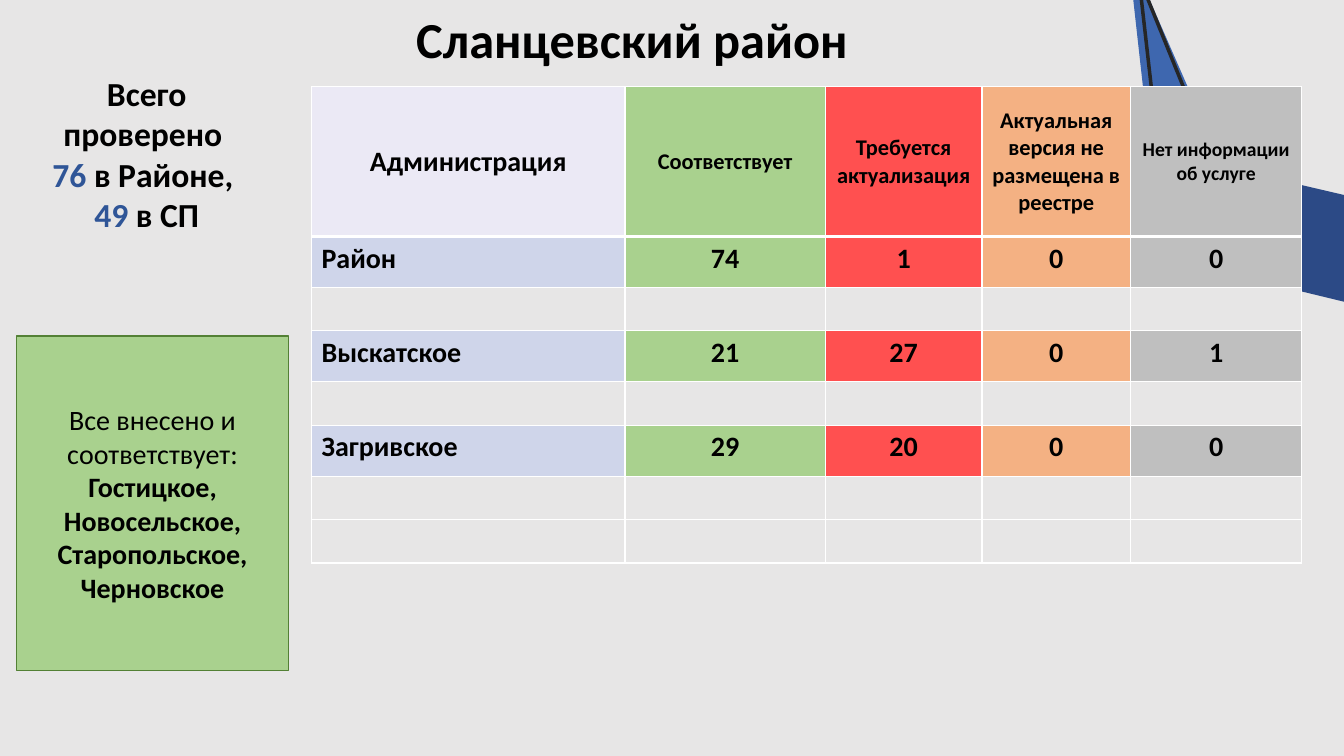
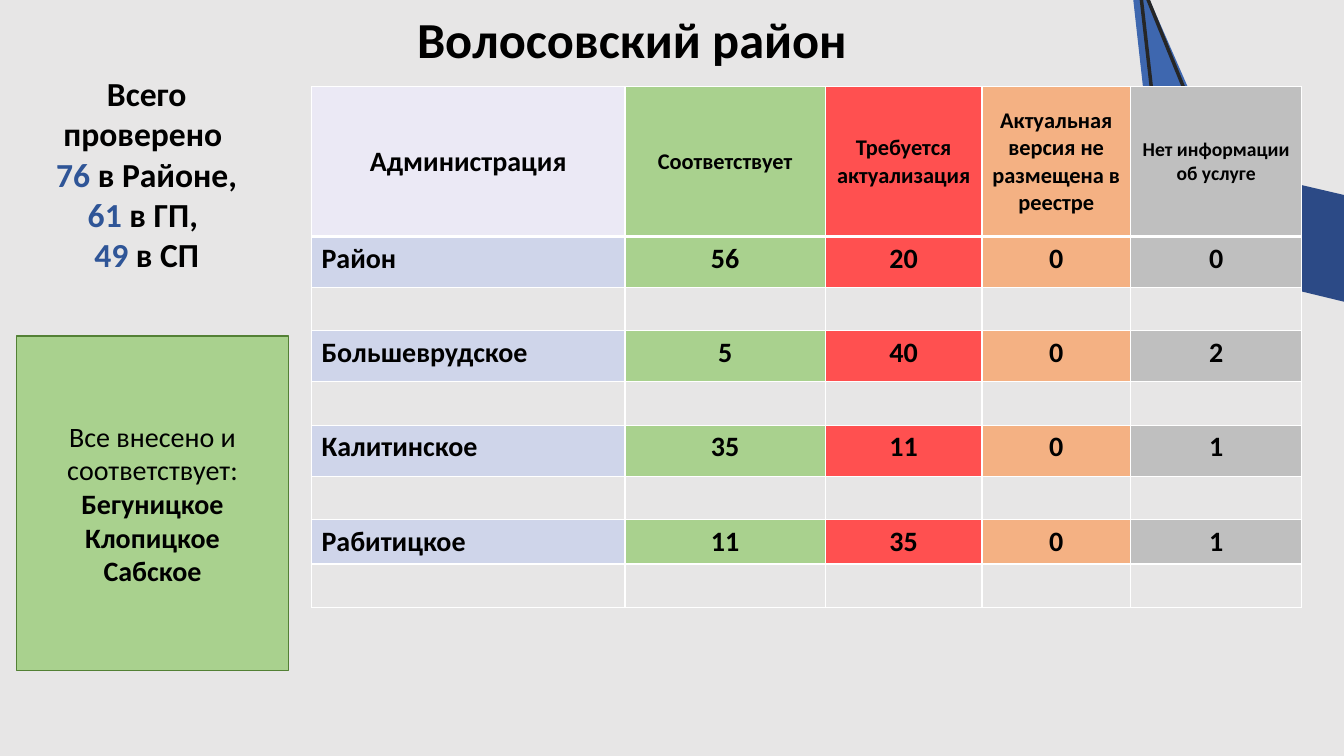
import pptx
import pptx.util
import pptx.dml.color
import pptx.enum.shapes
import pptx.enum.text
import pptx.oxml
import pptx.oxml.ns

Pt = pptx.util.Pt
ALIGN = pptx.enum.text.PP_ALIGN
ANCHOR = pptx.enum.text.MSO_ANCHOR

# Shared look
FONT = "Calibri"
BACK, BLACK, WHITE = "E7E6E6", "000000", "FFFFFF"
GREEN, GREEN_LINE, COUNT_BLUE = "A9D18E", "538035", "2F5597"
HEAD_FILL, NAME_FILL = "EBE9F5", "CFD5EA"
VALUE_FILLS = [GREEN, "FF5050", "F4B183", "BFBFBF"]

# Shared table layout: heading, size, column width
COLUMNS = [
    ("Администрация", 20, 224),
    ("Соответствует", 16, 143),
    ("Требуется актуализация", 16, 112),
    ("Актуальная версия не размещена в реестре", 16, 106),
    ("Нет информации об услуге", 14, 122.5),
]
HEAD_H, DATA_H, GAP_H, LOW_H = 107, 36.4, 31, 31.6

# Corner decoration: outline points, fill, line
DECOR = [
    ([(1053, 161), (873, 119), (830, 184), (1032, 233)], "2C4A86", None),
    ([(830, 184), (805.5, -36), (910, 203)], "3E67AF", None),
    ([(836.5, 186.5), (813.5, -16.5), (905, 209.5)], None, "262626"),
]

# One record per slide; None is an empty table row
DISTRICTS = [
    dict(
        title="Сланцевский район",
        rows=[("Район", 74, 1, 0, 0), None,
              ("Выскатское", 21, 27, 0, 1), None,
              ("Загривское", 29, 20, 0, 0), None, None],
        complete=["Гостицкое, Новосельское, Старопольское, Черновское"],
        totals=[[("76 ", "в Районе, ")], [("49 ", "в СП")]],
    ),
    dict(
        title="Волосовский район",
        rows=[("Район", 56, 20, 0, 0), None,
              ("Большеврудское", 5, 40, 0, 2), None,
              ("Калитинское", 35, 11, 0, 1), None,
              ("Рабитицкое", 11, 35, 0, 1), None],
        complete=["Бегуницкое", "Клопицкое", "Сабское"],
        totals=[[("76 ", "в Районе, "), ("61 ", "в ГП, ")], [("49 ", "в СП")]],
    ),
]


def rgb(value):
    return pptx.dml.color.RGBColor.from_string(value)


def write(p, text, size=20, bold=True, color=BLACK, align=ALIGN.CENTER):
    """Add one formatted run to a paragraph."""
    p.alignment = align
    r = p.add_run()
    r.text = text
    r.font.name, r.font.size, r.font.bold = FONT, Pt(size), bold
    r.font.color.rgb = rgb(color)


def paint(sp, fill=None, line=None, width=1):
    sp.shadow.inherit = False
    if fill:
        sp.fill.solid()
        sp.fill.fore_color.rgb = rgb(fill)
    else:
        sp.fill.background()
    if line:
        sp.line.color.rgb = rgb(line)
        sp.line.width = Pt(width)
    else:
        sp.line.fill.background()


def add_decor(s, layout):
    """Draw the corner shapes and move them to the layout."""
    for points, fill, line in DECOR:
        start, *rest = [(Pt(x), Pt(y)) for x, y in points]
        builder = s.shapes.build_freeform(*start)
        builder.add_line_segments(rest, close=True)
        sp = builder.convert_to_shape()
        paint(sp, fill, line, 2.5)
        layout.shapes._spTree.append(sp._element)


def add_title(s, text):
    sp = s.shapes.title
    sp.left, sp.top, sp.width, sp.height = Pt(288), Pt(2), Pt(327), Pt(51)
    tf = sp.text_frame
    tf.word_wrap = False
    tf.auto_size = pptx.enum.text.MSO_AUTO_SIZE.NONE
    tf.vertical_anchor = ANCHOR.MIDDLE
    write(tf.paragraphs[0], text, size=36)


def set_borders(cell, **widths):
    tcPr = cell._tc.get_or_add_tcPr()
    for side in "LRTB":
        tcPr.append(pptx.oxml.parse_xml(
            f'<a:ln{side} {pptx.oxml.ns.nsdecls("a")} w="{Pt(widths.get(side, 1))}">'
            f'<a:solidFill><a:srgbClr val="{WHITE}"/></a:solidFill></a:ln{side}>'))


def fill_cell(cell, color, **widths):
    set_borders(cell, **widths)
    cell.fill.solid()
    cell.fill.fore_color.rgb = rgb(color)


def add_table(s, rows):
    # A data row that follows the third one is lower
    heights = [HEAD_H] + [GAP_H if row is None else LOW_H if i > 5 else DATA_H
                          for i, row in enumerate(rows)]
    widths = [width for _, _, width in COLUMNS]
    table = s.shapes.add_table(len(heights), len(widths), Pt(222.5), Pt(62),
                               Pt(sum(widths)), Pt(sum(heights))).table
    table.horz_banding = False
    for column, width in zip(table.columns, widths):
        column.width = Pt(width)
    for row, height in zip(table.rows, heights):
        row.height = Pt(height)

    # Heading row
    for c, (text, size, _) in enumerate(COLUMNS):
        cell = table.cell(0, c)
        fill_cell(cell, ([HEAD_FILL] + VALUE_FILLS)[c], B=3)
        cell.vertical_anchor = ANCHOR.MIDDLE
        write(cell.text_frame.paragraphs[0], text, size=size)

    # Data and empty rows
    for i, row in enumerate(rows, 1):
        for c, fill in enumerate([NAME_FILL] + VALUE_FILLS):
            cell = table.cell(i, c)
            fill_cell(cell, fill if row else BACK, T=3 if i == 1 else 1)
            if row:
                write(cell.text_frame.paragraphs[0], str(row[c]),
                      align=ALIGN.CENTER if c else ALIGN.LEFT)


def add_complete_box(s, names):
    sp = s.shapes.add_shape(pptx.enum.shapes.MSO_SHAPE.RECTANGLE,
                            Pt(12), Pt(240), Pt(194), Pt(239))
    paint(sp, GREEN, GREEN_LINE)
    tf = sp.text_frame
    tf.word_wrap = True
    tf.vertical_anchor = ANCHOR.MIDDLE
    write(tf.paragraphs[0], "Все внесено и соответствует:", bold=False)
    for name in names:
        write(tf.add_paragraph(), name)


def add_totals(s, totals):
    lines = sum(len(pairs) for pairs in totals) + 2
    tf = s.shapes.add_textbox(Pt(28), Pt(48.5), Pt(153.5),
                              Pt(29 * lines + 7)).text_frame
    tf.word_wrap = True
    write(tf.paragraphs[0], "Всего проверено ", size=24)
    for pairs in totals:
        p = tf.add_paragraph()
        for count, place in pairs:
            write(p, count, size=24, color=COUNT_BLUE)
            write(p, place, size=24)


def main():
    prs = pptx.Presentation()
    prs.slide_width, prs.slide_height = Pt(960), Pt(540)
    background = prs.slide_master.background.fill
    background.solid()
    background.fore_color.rgb = rgb(BACK)
    layout = prs.slide_layouts[5]

    for i, district in enumerate(DISTRICTS):
        s = prs.slides.add_slide(layout)
        if i == 0:
            add_decor(s, layout)
        add_table(s, district["rows"])
        add_title(s, district["title"])
        add_complete_box(s, district["complete"])
        add_totals(s, district["totals"])
    prs.save("out.pptx")


if __name__ == "__main__":
    main()
